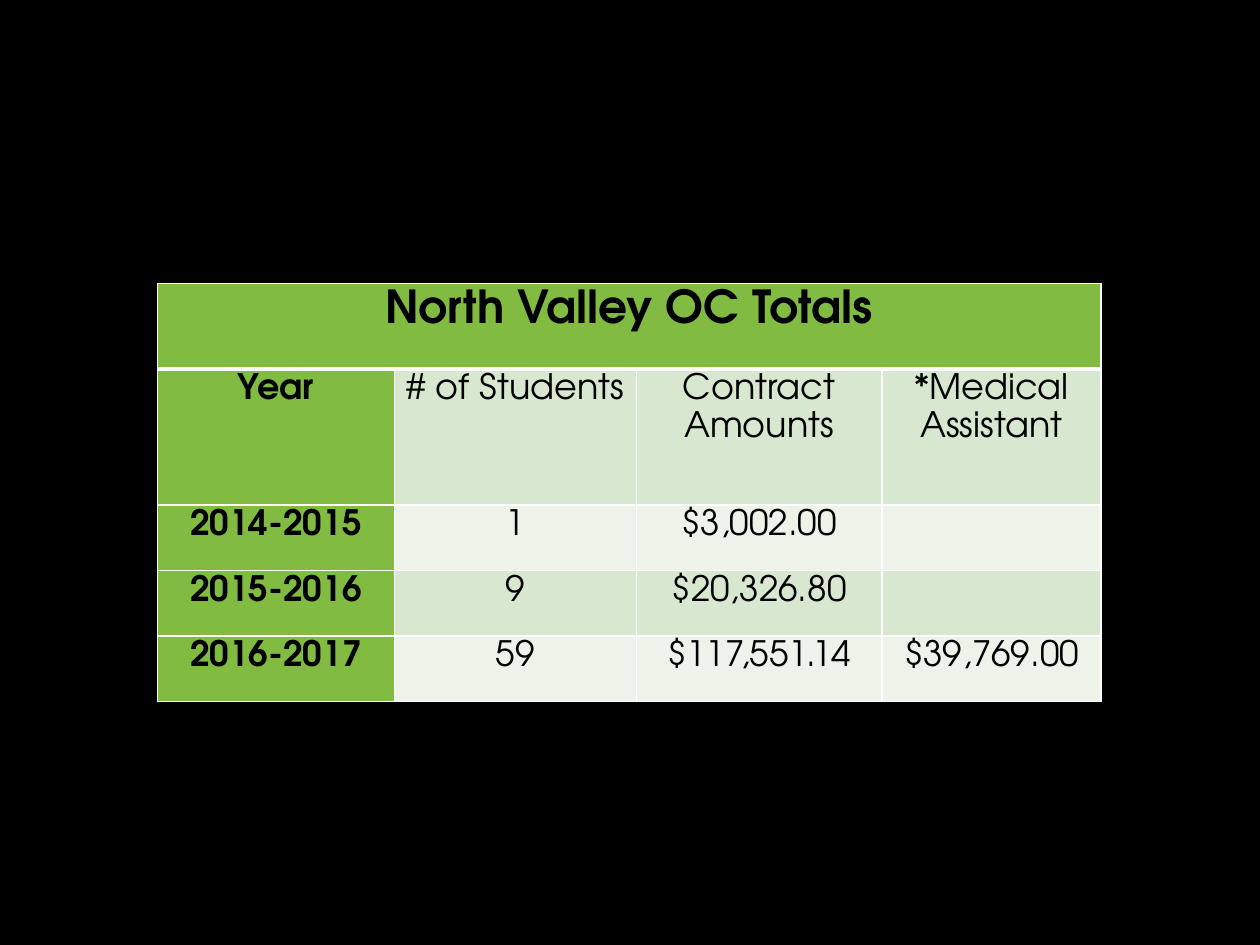
from lxml import etree
from pptx import Presentation
from pptx.dml.color import RGBColor
from pptx.enum.text import PP_ALIGN
from pptx.oxml.ns import qn
from pptx.util import Inches, Pt

CENTER = PP_ALIGN.CENTER
BLANK_LAYOUT = 6
FONT = "TeX Gyre Adventor"
COLORS = {
    "background": "000000",
    "text": "000000",
    "border": "FFFFFF",
    "green": "81BB42",
    "dark band": "D8E7CF",
    "light band": "EDF3E9",
}

TITLE = "North Valley OC Totals"
ROWS = [
    ["Year", "# of Students", "Contract Amounts", "*Medical Assistant"],
    ["2014-2015", "1", "$3,002.00", ""],
    ["2015-2016", "9", "$20,326.80", ""],
    ["2016-2017", "59", "$117,551.14", "$39,769.00"],
]
COLUMN_WIDTHS = [1.88, 1.92, 1.95, 1.74]
ROW_HEIGHTS = [0.68, 1.08, 0.52, 0.52, 0.52]


def color(name):
    return RGBColor.from_string(COLORS[name])


def write_text(text_frame, text, size=20, bold=False):
    paragraph = text_frame.paragraphs[0]
    paragraph.alignment = CENTER
    paragraph.line_spacing = 1.15
    paragraph.font.size = Pt(size)
    if text:
        run = paragraph.add_run()
        run.text = text
        run.font.name = FONT
        run.font.size = Pt(size)
        run.font.bold = bold
        run.font.color.rgb = color("text")


def set_borders(cell, top=1, bottom=1):
    properties = cell._tc.get_or_add_tcPr()
    for side, width in (("L", 1), ("R", 1), ("T", top), ("B", bottom)):
        line = etree.SubElement(properties, qn(f"a:ln{side}"), w=str(Pt(width)))
        fill = etree.SubElement(line, qn("a:solidFill"))
        etree.SubElement(fill, qn("a:srgbClr"), val=COLORS["border"])


def format_cell(cell, fill, top=1, bottom=1):
    cell.margin_left = cell.margin_right = Inches(0.07)
    cell.margin_top = cell.margin_bottom = 0
    set_borders(cell, top, bottom)
    cell.fill.solid()
    cell.fill.fore_color.rgb = color(fill)


def add_totals_table(slide, left, top, width, height):
    frame = slide.shapes.add_table(
        len(ROW_HEIGHTS), len(COLUMN_WIDTHS),
        Inches(left), Inches(top), Inches(width), Inches(height))
    table = frame.table
    for column, column_width in zip(table.columns, COLUMN_WIDTHS):
        column.width = Inches(column_width)
    for row, row_height in zip(table.rows, ROW_HEIGHTS):
        row.height = Inches(row_height)

    # Title row, with a heavy rule below it
    for cell in table.rows[0].cells:
        format_cell(cell, "green", bottom=3)
    table.cell(0, 0).merge(table.cell(0, len(COLUMN_WIDTHS) - 1))
    write_text(table.cell(0, 0).text_frame, TITLE, size=26, bold=True)

    # Banded rows, with a green first column
    for row_index, values in enumerate(ROWS, start=1):
        band = "dark band" if row_index % 2 else "light band"
        for column_index, value in enumerate(values):
            is_first = column_index == 0
            cell = table.cell(row_index, column_index)
            format_cell(cell, "green" if is_first else band,
                        top=3 if row_index == 1 else 1)
            write_text(cell.text_frame, value, bold=is_first)


def main():
    presentation = Presentation()
    presentation.slide_width = Inches(10)
    presentation.slide_height = Inches(7.5)
    slide = presentation.slides.add_slide(
        presentation.slide_layouts[BLANK_LAYOUT])
    background = slide.background.fill
    background.solid()
    background.fore_color.rgb = color("background")
    add_totals_table(slide, 1.25, 2.25, sum(COLUMN_WIDTHS), sum(ROW_HEIGHTS))
    presentation.save("out.pptx")


if __name__ == "__main__":
    main()
